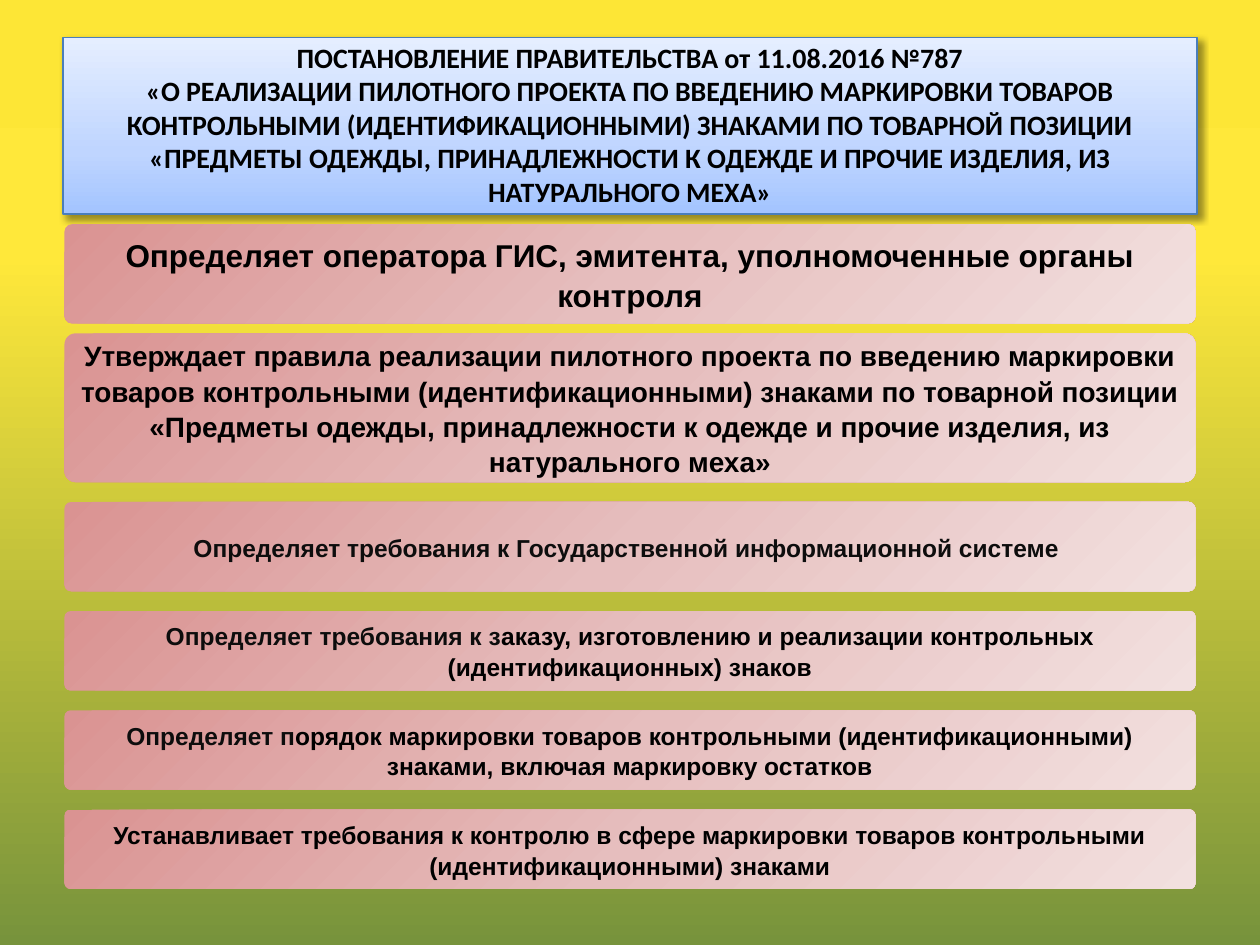
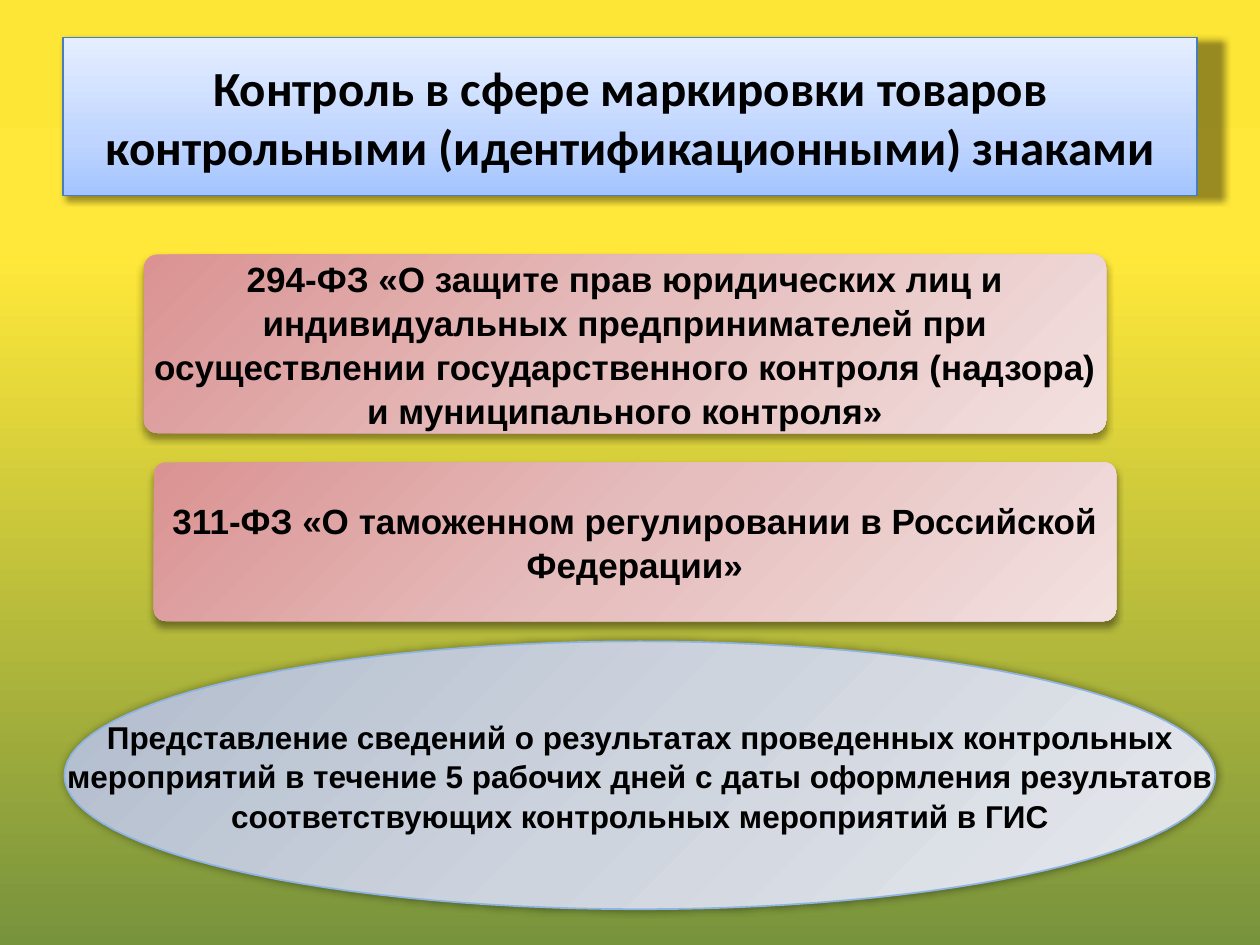
import math
from lxml import etree
from pptx import Presentation
from pptx import util as u
from pptx.dml.color import RGBColor
from pptx.enum import shapes, text
from pptx.oxml.ns import qn

# All lengths are millimetres
WIDTH, HEIGHT = 254, 190.5
BLACK, SOFT_BLACK = "000000", "0D0D0D"
BACKDROP = [(0, "FDE636"), (27, "FFE83A"), (100, "77933C")]
TITLE_BLUE = [(0, "E5EEFF"), (65, "BFD5FF"), (100, "A3C4FF")]
ROSE = [(0, "DA9392"), (50, "E6BEBE"), (100, "F2E0DF")]
STEEL = [(0, "B0BBCC"), (50, "CED4DE"), (100, "E7EAEE")]

DECREE_TITLE = [
    "ПОСТАНОВЛЕНИЕ ПРАВИТЕЛЬСТВА от 11.08.2016 №787",
    "«О РЕАЛИЗАЦИИ ПИЛОТНОГО ПРОЕКТА ПО ВВЕДЕНИЮ МАРКИРОВКИ ТОВАРОВ "
    "КОНТРОЛЬНЫМИ (ИДЕНТИФИКАЦИОННЫМИ) ЗНАКАМИ ПО ТОВАРНОЙ ПОЗИЦИИ "
    "«ПРЕДМЕТЫ ОДЕЖДЫ, ПРИНАДЛЕЖНОСТИ К ОДЕЖДЕ И ПРОЧИЕ ИЗДЕЛИЯ, ИЗ НАТУРАЛЬНОГО МЕХА»",
]
# gap above, height, text size, soft black opening, black rest
PROVISIONS = [
    (0, 20, 18, "", "Определяет оператора ГИС, эмитента, уполномоченные органы контроля"),
    (2, 30, 16, "", "Утверждает правила реализации пилотного проекта по введению маркировки "
     "товаров контрольными (идентификационными) знаками по товарной позиции «Предметы "
     "одежды, принадлежности к одежде и прочие изделия, из натурального меха»"),
    (4, 18, 14, "Определяет требования к Государственной информационной системе ", ""),
    (4, 16, 14, "Определяет требования к з",
     "аказу, изготовлению и реализации контрольных (идентификационных) знаков"),
    (4, 16, 14, "Определяет п", "орядок маркировки товаров контрольными "
     "(идентификационными) знаками, включая маркировку остатков"),
    (4, 16, 14, "", "Устанавливает требования к контролю в сфере маркировки товаров "
     "контрольными (идентификационными) знаками"),
]
PROVISIONS_TOP = 45.2

CONTROL_TITLE = ["Контроль в сфере маркировки товаров контрольными (идентификационными) знаками"]
LAWS = [
    ((29, 51.3, 194, 36), "294-ФЗ «О защите прав юридических лиц и индивидуальных "
     "предпринимателей при осуществлении государственного контроля (надзора) и "
     "муниципального контроля»"),
    ((31, 93.2, 194, 32), "311-ФЗ «О таможенном регулировании в Российской Федерации»"),
]
REPORTING_BOX = (13, 129.3, 232, 54)
REPORTING = ("Представление сведений о результатах проведенных контрольных мероприятий в течение "
             "5 рабочих дней с даты оформления результатов соответствующих контрольных "
             "мероприятий в ГИС")


def rgb(code):
    return RGBColor.from_string(code)


def paint_gradient(fill, owner, stops, angle):
    """Fill with any number of colour stops; the angle runs clockwise."""
    fill.gradient()
    grad = owner.find(".//" + qn("a:gradFill"))
    for child in list(grad):
        grad.remove(child)
    stop_list = etree.SubElement(grad, qn("a:gsLst"))
    for share, code in stops:
        stop = etree.SubElement(stop_list, qn("a:gs"), pos=str(share * 1000))
        etree.SubElement(stop, qn("a:srgbClr"), val=code)
    etree.SubElement(grad, qn("a:lin"), ang=str(angle * 60000), scaled="0")


def cast_shadow(shape, blur, distance, angle, stretch=100):
    effects = shape._element.spPr.find(qn("a:effectLst"))
    shadow = etree.SubElement(
        effects, qn("a:outerShdw"), blurRad=str(u.Pt(blur)), dist=str(u.Pt(distance)),
        dir=str(angle * 60000), sx=str(stretch * 1000), algn="tl", rotWithShape="0")
    color = etree.SubElement(shadow, qn("a:srgbClr"), val=BLACK)
    etree.SubElement(color, qn("a:alpha"), val="40000")


def style(shape, stops, angle, outline=None, width=1):
    shape.shadow.inherit = False
    paint_gradient(shape.fill, shape._element, stops, angle)
    if outline:
        shape.line.color.rgb = rgb(outline)
        shape.line.width = u.Pt(width)
    else:
        shape.line.fill.background()


def write(shape, paragraphs, size, font="Arial", insets=(1, 1), spacing=1.05,
          anchor=text.MSO_ANCHOR.MIDDLE):
    """Each paragraph is a list of (wording, colour) runs."""
    frame = shape.text_frame
    frame.word_wrap = True
    frame.vertical_anchor = anchor
    frame.margin_left = frame.margin_right = u.Mm(insets[0])
    frame.margin_top = frame.margin_bottom = u.Mm(insets[1])
    for i, runs in enumerate(paragraphs):
        paragraph = frame.add_paragraph() if i else frame.paragraphs[0]
        paragraph.alignment = text.PP_ALIGN.CENTER
        paragraph.line_spacing = spacing
        for wording, code in runs:
            run = paragraph.add_run()
            run.text = wording
            run.font.name, run.font.size, run.font.bold = font, u.Pt(size), True
            run.font.color.rgb = rgb(code)


def add_box(slide, kind, box):
    return slide.shapes.add_shape(kind, *map(u.Mm, box))


def add_title(slide, lines, height, size, anchor, stretch):
    title = add_box(slide, shapes.MSO_SHAPE.RECTANGLE, (12.7, 7.62, WIDTH * 0.9, height))
    style(title, TITLE_BLUE, 90, "4A7EBB", 0.75)
    cast_shadow(title, 4, 3, 45, stretch)
    write(title, [[(line, BLACK)] for line in lines], size, "Calibri", (2.54, 1.27), 1, anchor)


def add_band(slide, box, runs, size):
    band = add_box(slide, shapes.MSO_SHAPE.ROUNDED_RECTANGLE, box)
    band.adjustments[0] = 0.075
    style(band, ROSE, 45)
    write(band, [runs], size)
    return band


def add_full_width_ellipse(slide, box, steps=120):
    """An ellipse outline whose text may use the whole bounding box."""
    left, top, width, height = box
    turns = [2 * math.pi * i / steps for i in range(steps)]
    points = [(u.Mm(left + width * (1 + math.cos(t)) / 2),
               u.Mm(top + height * (1 + math.sin(t)) / 2)) for t in turns]
    outline = slide.shapes.build_freeform(*points[0])
    outline.add_line_segments(points[1:], close=True)
    return outline.convert_to_shape()


def new_slide(deck):
    slide = deck.slides.add_slide(deck.slide_layouts[6])
    paint_gradient(slide.background.fill, slide._element, BACKDROP, 90)
    return slide


def build_decree(deck):
    slide = new_slide(deck)
    add_title(slide, DECREE_TITLE, 35.56, 16, text.MSO_ANCHOR.BOTTOM, 100)
    top = PROVISIONS_TOP
    for gap, height, size, opening, rest in PROVISIONS:
        top += gap
        runs = [run for run in ((opening, SOFT_BLACK), (rest, BLACK)) if run[0]]
        add_band(slide, (13, top, 228, height), runs, size)
        top += height


def build_control(deck):
    slide = new_slide(deck)
    add_title(slide, CONTROL_TITLE, 31.75, 28, text.MSO_ANCHOR.MIDDLE, 102)
    for box, law in LAWS:
        cast_shadow(add_band(slide, box, [(law, BLACK)], 20), 4, 3, 90)
    reporting = add_full_width_ellipse(slide, REPORTING_BOX)
    style(reporting, STEEL, 45, "8EB4E3")
    cast_shadow(reporting, 5, 0, 0)
    write(reporting, [[(REPORTING, BLACK)]], 18, insets=(0, 0))


def main():
    deck = Presentation()
    deck.slide_width, deck.slide_height = u.Mm(WIDTH), u.Mm(HEIGHT)
    build_decree(deck)
    build_control(deck)
    deck.save("out.pptx")


if __name__ == "__main__":
    main()
